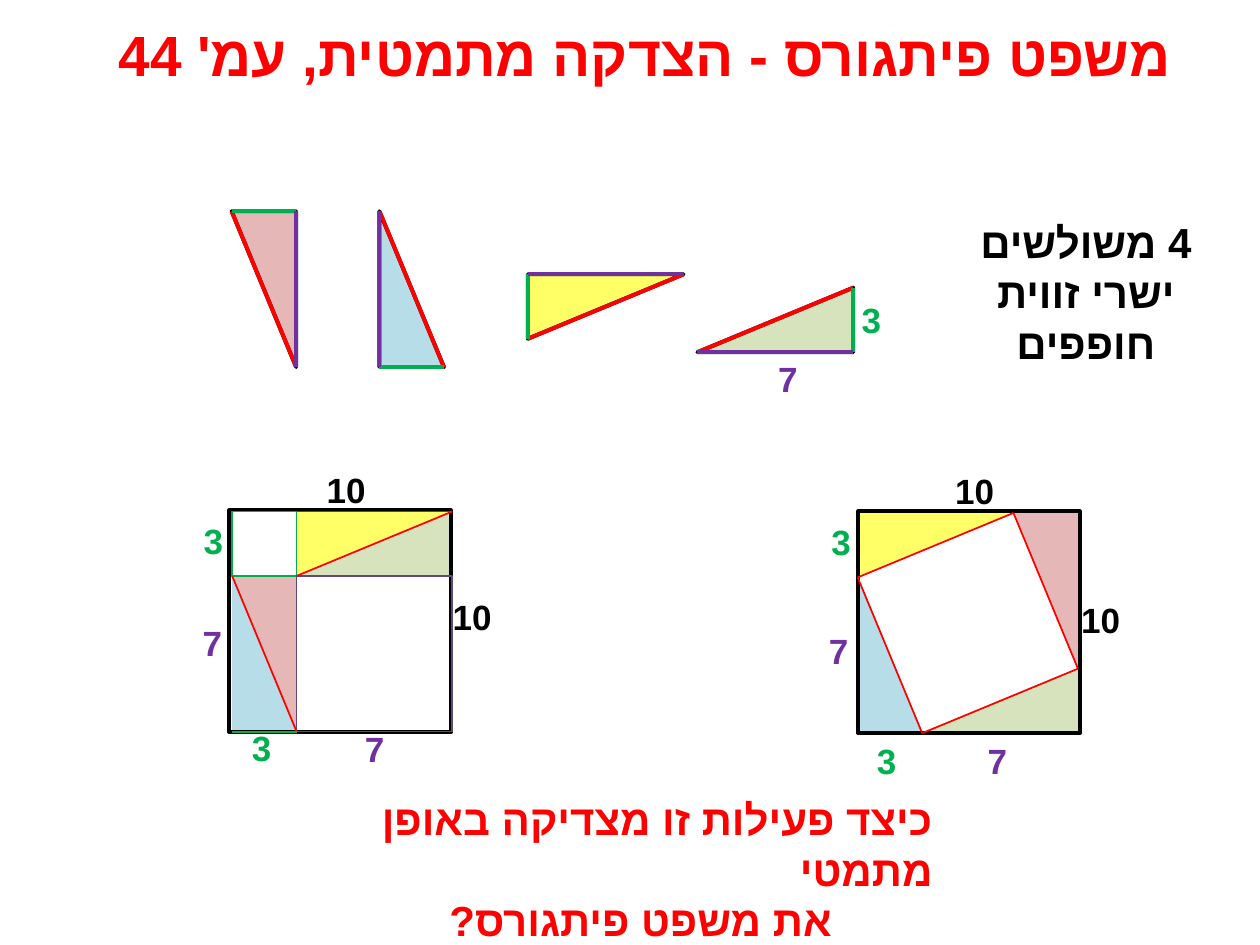
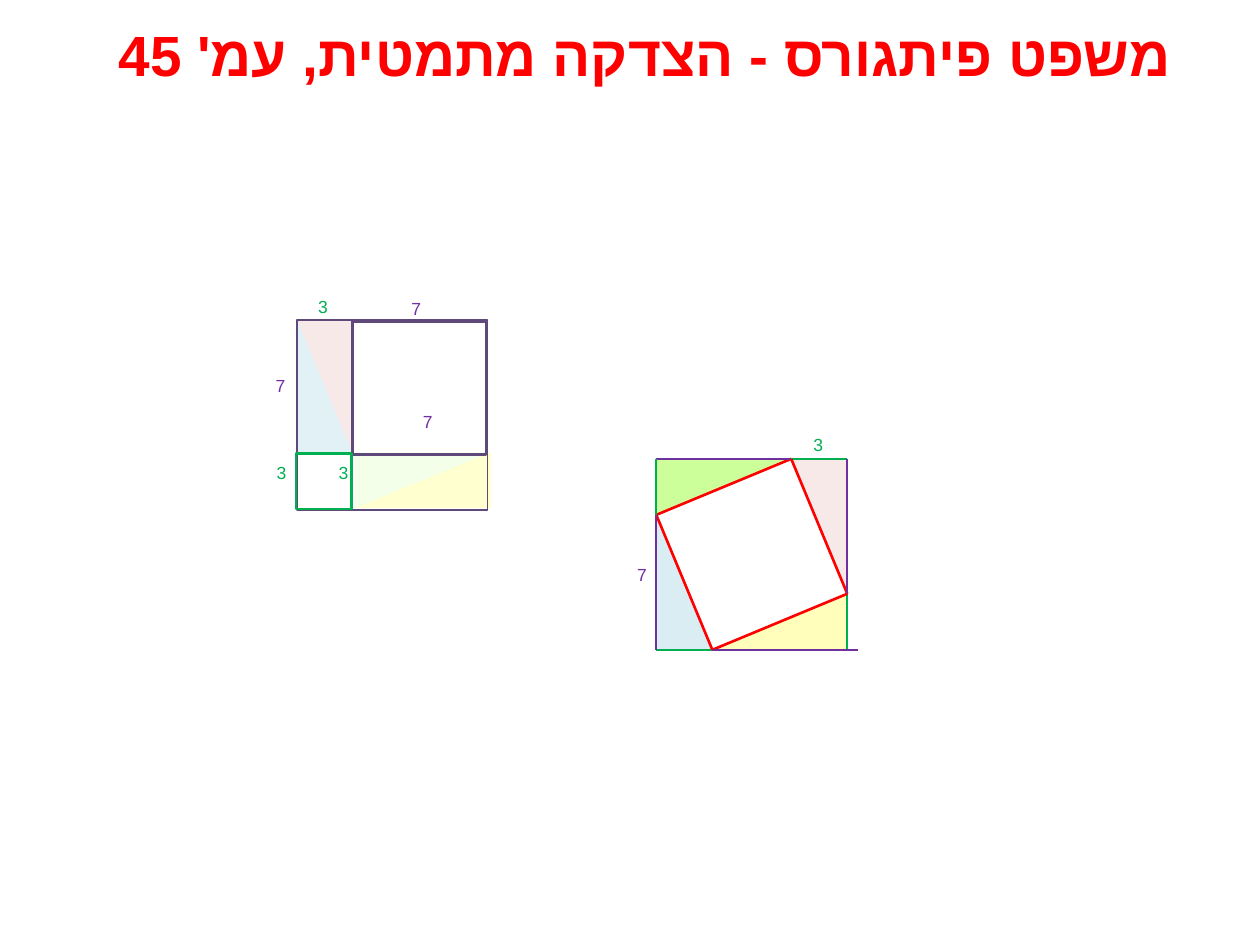
import pptx
import pptx.dml.color
import pptx.enum.shapes
import pptx.enum.text
import pptx.oxml
import pptx.oxml.ns
import pptx.util

Cm = pptx.util.Cm
Pt = pptx.util.Pt
RGBColor = pptx.dml.color.RGBColor
ALIGN = pptx.enum.text.PP_ALIGN
qn = pptx.oxml.ns.qn

# Colours: sides of the triangle, then their fills
BLACK = RGBColor(0x00, 0x00, 0x00)
SHORT_SIDE = RGBColor(0x00, 0xB0, 0x50)
LONG_SIDE = RGBColor(0x70, 0x30, 0xA0)
HYPOTENUSE = RGBColor(0xFF, 0x00, 0x00)
FRAME = RGBColor(0x5F, 0x49, 0x7A)
GREEN = RGBColor(0xD6, 0xE3, 0xBC)
LIME = RGBColor(0xCC, 0xFF, 0x99)
YELLOW = RGBColor(0xFF, 0xFF, 0x66)
PINK = RGBColor(0xE5, 0xB8, 0xB7)
BLUE = RGBColor(0xB6, 0xDD, 0xE8)


def write_text(slide, box, lines, size, color, bold=True, font="Arial",
               aligns=(ALIGN.RIGHT,), after=0, spacing=None):
    """Write right-to-left paragraphs into a text box."""
    frame = slide.shapes.add_textbox(*[Cm(v) for v in box]).text_frame
    frame.word_wrap = True
    frame.text = "\n".join(lines)
    for paragraph, align in zip(frame.paragraphs, aligns):
        paragraph.alignment = align
        paragraph.space_after = Pt(after)
        if spacing:
            paragraph.line_spacing = spacing
        paragraph._p.get_or_add_pPr().set("rtl", "1")
        run = paragraph.runs[0]
        run.font.name = font
        run.font.size = Pt(size)
        run.font.bold = bold
        run.font.color.rgb = color
        complex_script = pptx.oxml.parse_xml(
            '<a:cs xmlns:a="http://schemas.openxmlformats.org/drawingml/2006/main"'
            ' typeface="Arial"/>')
        run._r.get_or_add_rPr().append(complex_script)


def pinwheel(x, y, short, long):
    """Corners of a square, and the inner square's corners on its sides, clockwise."""
    side = short + long
    corners = [(x, y), (x + side, y), (x + side, y + side), (x, y + side)]
    touches = [(x + long, y), (x + side, y + long),
               (x + short, y + side), (x, y + short)]
    return corners, touches


# Slide 1: four separate congruent triangles (corner, short end, long end)
SHORT, LONG = 1.3, 3.14
triangles1, frames1, lines1 = [], [], []
for fill, corner, short_end, long_end in [
    (GREEN, (17.2, 7.1), (0, -SHORT), (-LONG, 0)),
    (YELLOW, (10.64, 5.53), (0, SHORT), (LONG, 0)),
    (PINK, (5.97, 4.26), (-SHORT, 0), (0, LONG)),
    (BLUE, (7.65, 7.4), (SHORT, 0), (0, -LONG)),
]:
    ends = [(corner[0] + dx, corner[1] + dy) for dx, dy in (short_end, long_end)]
    triangles1.append((fill, 100, BLACK, [corner, *ends]))
    lines1 += [(*ends, HYPOTENUSE, 2.25), (corner, ends[0], SHORT_SIDE, 2.25),
               (corner, ends[1], LONG_SIDE, 2.25)]

# Slide 1: square cut into two squares and two rectangles
left, top = 4.68, 10.31
mid_x, mid_y = left + SHORT, top + SHORT
right, bottom = mid_x + LONG, mid_y + LONG
triangles1 += [
    (GREEN, 100, None, [(right, top), (right, mid_y), (mid_x, mid_y)]),
    (YELLOW, 100, None, [(mid_x, mid_y), (mid_x, top), (right, top)]),
    (PINK, 100, None, [(left, mid_y), (mid_x, mid_y), (mid_x, bottom)]),
    (BLUE, 100, None, [(mid_x, bottom), (left, bottom), (left, mid_y)]),
]
frames1 += [(4.62, 10.29, 4.47, BLACK, 2.25), (left, top, SHORT, SHORT_SIDE, 1),
            (mid_x, mid_y, LONG, FRAME, 1)]
lines1 += [
    ((mid_x, mid_y), (right, top), HYPOTENUSE, 1),
    ((left, mid_y), (mid_x, bottom), HYPOTENUSE, 1),
    ((mid_x, top), (right, top), LONG_SIDE, 1),
    ((left, bottom), (mid_x, bottom), SHORT_SIDE, 1),
]

# Slide 1: square with the tilted inner square
corners, touches = pinwheel(17.29, 10.34, SHORT, LONG)
for i, fill in enumerate((YELLOW, PINK, GREEN, BLUE)):
    triangles1.append((fill, 100, None, [touches[i - 1], corners[i], touches[i]]))
    lines1.append((touches[i - 1], touches[i], HYPOTENUSE, 1))
frames1.append((17.3, 10.31, 4.47, BLACK, 2.25))

labels1 = [
    ("7", 15.54, 7.09), ("3", 17.22, 5.89),
    ("10", 5.92, 9.32), ("10", 8.46, 11.89),
    ("3", 3.96, 10.34), ("7", 3.94, 12.4), ("3", 4.93, 14.53), ("7", 7.21, 14.55),
    ("10", 18.59, 9.35), ("10", 21.13, 11.94),
    ("3", 16.61, 10.36), ("7", 16.56, 12.57), ("3", 17.53, 14.78), ("7", 19.76, 14.78),
]

# Slide 2: square cut into two squares and two rectangles
SHORT2, LONG2 = 1.13, 2.72
left, top = 5.99, 6.45
mid_x, mid_y = left + SHORT2, top + LONG2
strip_left, strip_right, strip_top, strip_bottom = 7.16, 9.9, 9.12, 10.24
triangles2 = [
    (PINK, 31, None, [(left, top), (mid_x, top), (mid_x, mid_y)]),
    (BLUE, 39, None, [(mid_x, mid_y), (left, mid_y), (left, top)]),
    (YELLOW, 31, None, [(strip_right, strip_top), (strip_right, strip_bottom),
                        (strip_left, strip_bottom)]),
    (LIME, 22, None, [(strip_left, strip_bottom), (strip_left, strip_top),
                      (strip_right, strip_top)]),
]
frames2 = [(7.11, 6.48, 2.69, FRAME, 1.5), (left, top, 3.84, FRAME, 1),
           (5.97, 9.14, 1.12, SHORT_SIDE, 1.5)]
lines2 = []

# Slide 2: square with the tilted inner square
corners, touches = pinwheel(13.23, 9.25, SHORT2, LONG2)
for i, (fill, alpha) in enumerate([(LIME, 100), (PINK, 31), (YELLOW, 44), (BLUE, 50)]):
    triangles2.append((fill, alpha, None, [touches[i - 1], corners[i], touches[i]]))
    lines2 += [(touches[i - 1], touches[i], HYPOTENUSE, 1.5),
               (corners[i], touches[i], LONG_SIDE, 1),
               (touches[i], corners[(i + 1) % 4], SHORT_SIDE, 1)]
lines2.append((corners[2], (17.3, corners[2][1]), LONG_SIDE, 1))

labels2 = [
    ("3", 6.17, 5.78), ("7", 8.05, 5.82), ("7", 5.31, 7.37), ("3", 5.33, 9.12),
    ("3", 6.58, 9.12), ("7", 8.28, 8.1), ("3", 16.15, 8.56), ("7", 12.6, 11.18),
]

prs = pptx.Presentation()
prs.slide_width, prs.slide_height = Cm(25.4), Cm(19.05)
number_colors = {"3": SHORT_SIDE, "7": LONG_SIDE, "10": BLACK}

for page, triangles, frames, lines, labels, size, bold, spacing in [
    (44, triangles1, frames1, lines1, labels1, 20, True, None),
    (45, triangles2, frames2, lines2, labels2, 10, False, 1.15),
]:
    slide = prs.slides.add_slide(prs.slide_layouts[6])
    shapes = slide.shapes

    # Title
    write_text(slide, (1.57, 0.28, 22.86, 1.6),
               [f"משפט פיתגורס - הצדקה מתמטית, עמ' {page}"],
               32.4, HYPOTENUSE, font="Calibri", aligns=(ALIGN.CENTER,))

    # Triangles
    for fill, alpha, outline, points in triangles:
        start, *rest = [(Cm(x), Cm(y)) for x, y in points]
        builder = shapes.build_freeform(*start)
        builder.add_line_segments(rest, close=True)
        triangle = builder.convert_to_shape()
        triangle.shadow.inherit = False
        triangle.fill.solid()
        triangle.fill.fore_color.rgb = fill
        if alpha < 100:
            color = triangle._element.spPr.find(qn("a:solidFill"))[0]
            color.append(color.makeelement(qn("a:alpha"), {"val": str(alpha * 1000)}))
        if outline is None:
            triangle.line.fill.background()
        else:
            triangle.line.color.rgb = outline
            triangle.line.width = Pt(2.25)

    # Square frames
    for x, y, side, color, width in frames:
        square = shapes.add_shape(pptx.enum.shapes.MSO_SHAPE.RECTANGLE,
                                  Cm(x), Cm(y), Cm(side), Cm(side))
        square.shadow.inherit = False
        square.fill.background()
        square.line.color.rgb = color
        square.line.width = Pt(width)

    # Coloured sides
    for start, end, color, width in lines:
        side = shapes.add_connector(pptx.enum.shapes.MSO_CONNECTOR.STRAIGHT,
                                    *[Cm(v) for v in (*start, *end)])
        side.line.color.rgb = color
        side.line.width = Pt(width)
        properties = side._element.spPr
        properties.append(properties.makeelement(qn("a:effectLst"), {}))

    # Side lengths
    for number, x, y in labels:
        width = 1.7 if number == "10" else 0.035 * size + 0.09 if bold else 0.69
        write_text(slide, (x, y, width, 1.1), [number], size, number_colors[number],
                   bold=bold, after=10, spacing=spacing)

# Slide 1: caption and question
first = prs.slides[0]
write_text(first, (19.25, 4.24, 5.28, 3.33), ["4 משולשים ישרי זווית חופפים"],
           24, BLACK, aligns=(ALIGN.CENTER,))
write_text(first, (6.78, 15.88, 12.27, 2.31),
           ["כיצד פעילות זו מצדיקה באופן מתמטי", "את משפט פיתגורס?"],
           24, HYPOTENUSE, aligns=(ALIGN.RIGHT, ALIGN.CENTER))

prs.save("out.pptx")
